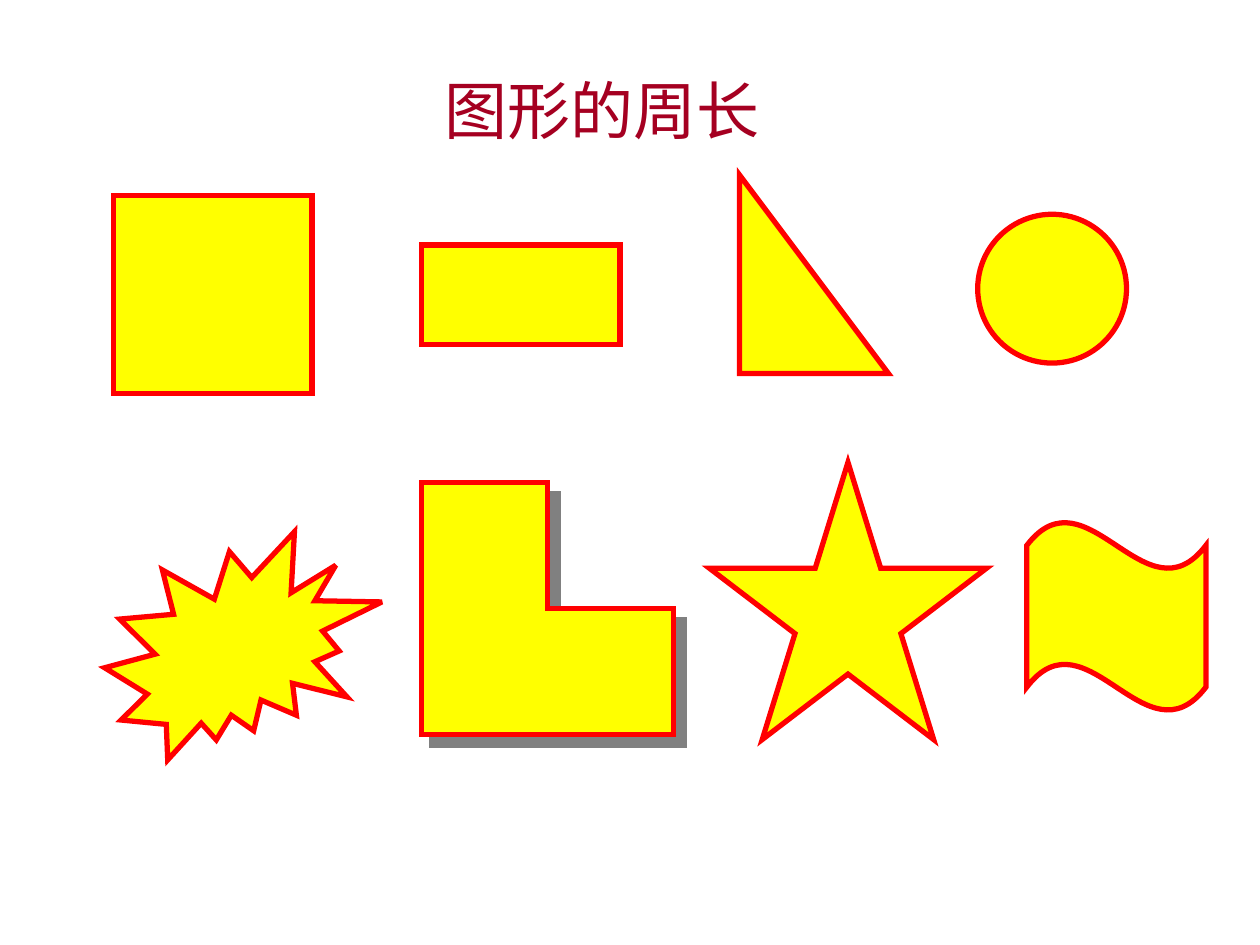
from lxml.etree import SubElement
from pptx import Presentation
from pptx.dml.color import RGBColor
from pptx.enum.shapes import MSO_SHAPE
from pptx.enum.text import MSO_ANCHOR, PP_ALIGN
from pptx.oxml.ns import qn
from pptx.util import Cm, Pt

YELLOW = RGBColor(0xFF, 0xFF, 0x00)
RED = RGBColor(0xFF, 0x00, 0x00)
CRIMSON = RGBColor(0xA5, 0x00, 0x21)
GREY = RGBColor(0x80, 0x80, 0x80)

TITLE_ONLY = 5

# Preset, left, top, width, height in centimetres
FIGURES = [
    (MSO_SHAPE.RECTANGLE, 2.29, 3.94, 4, 4),
    (MSO_SHAPE.RECTANGLE, 8.5, 4.94, 4, 2),
    (MSO_SHAPE.RIGHT_TRIANGLE, 14.91, 3.53, 3, 4),
    (MSO_SHAPE.OVAL, 19.71, 4.32, 3, 3),
    (MSO_SHAPE.EXPLOSION2, 2.11, 10.72, 5.59, 4.6),
    (MSO_SHAPE.STAR_5_POINT, 14.3, 9.32, 5.59, 5.59),
    (MSO_SHAPE.WAVE, 20.7, 10.52, 3.61, 3.81),
]


class FigurePage:
    def __init__(self, page, fill, outline, outline_width):
        self.page = page
        self.fill = fill
        self.outline = outline
        self.outline_width = outline_width

    def title(self, text, left, top, width, height):
        box = self.page.shapes.title
        box.left, box.top, box.width, box.height = map(Cm, (left, top, width, height))
        frame = box.text_frame
        frame.text = text
        frame.word_wrap = False
        frame.vertical_anchor = MSO_ANCHOR.MIDDLE
        para = frame.paragraphs[0]
        para.alignment = PP_ALIGN.LEFT
        para.font.name = "Arial"
        para.font.size = Pt(36)
        para.font.color.rgb = CRIMSON

    def paint(self, shape):
        """Give a shape the common fill and a sharp-cornered outline."""
        shape.shadow.inherit = False
        shape.fill.solid()
        shape.fill.fore_color.rgb = self.fill
        shape.line.color.rgb = self.outline
        shape.line.width = self.outline_width
        line = shape._element.spPr.find(qn("a:ln"))
        SubElement(line, qn("a:miter"), lim="800000")

    def figure(self, preset, left, top, width, height):
        shape = self.page.shapes.add_shape(
            preset, Cm(left), Cm(top), Cm(width), Cm(height))
        self.paint(shape)
        return shape

    def l_shape(self, left, top, size):
        """Draw a square that lacks its upper right quarter."""
        middle_x, middle_y = left + size / 2, top + size / 2
        right, bottom = left + size, top + size
        corners = [(left, bottom), (right, bottom), (right, middle_y),
                   (middle_x, middle_y), (middle_x, top)]
        builder = self.page.shapes.build_freeform(Cm(left), Cm(top))
        builder.add_line_segments([(Cm(x), Cm(y)) for x, y in corners], close=True)
        shape = builder.convert_to_shape()
        self.paint(shape)
        return shape

    def drop_shadow(self, shape, color, distance):
        effects = shape._element.spPr.find(qn("a:effectLst"))
        shadow = SubElement(effects, qn("a:outerShdw"), dist=str(distance),
                            dir=str(45 * 60000), algn="ctr", rotWithShape="0")
        SubElement(shadow, qn("a:srgbClr"), val=str(color))


def main():
    deck = Presentation()
    deck.slide_width, deck.slide_height = Cm(25.4), Cm(19.05)
    page = deck.slides.add_slide(deck.slide_layouts[TITLE_ONLY])
    figures = FigurePage(page, YELLOW, RED, Pt(3))

    figures.title("图形的周长", 8.71, 1.32, 6.86, 1.78)
    for figure in FIGURES:
        figures.figure(*figure)
    corner = figures.l_shape(8.5, 9.73, 5.08)
    figures.drop_shadow(corner, GREY, Pt(8.5))

    deck.save("out.pptx")


if __name__ == "__main__":
    main()
